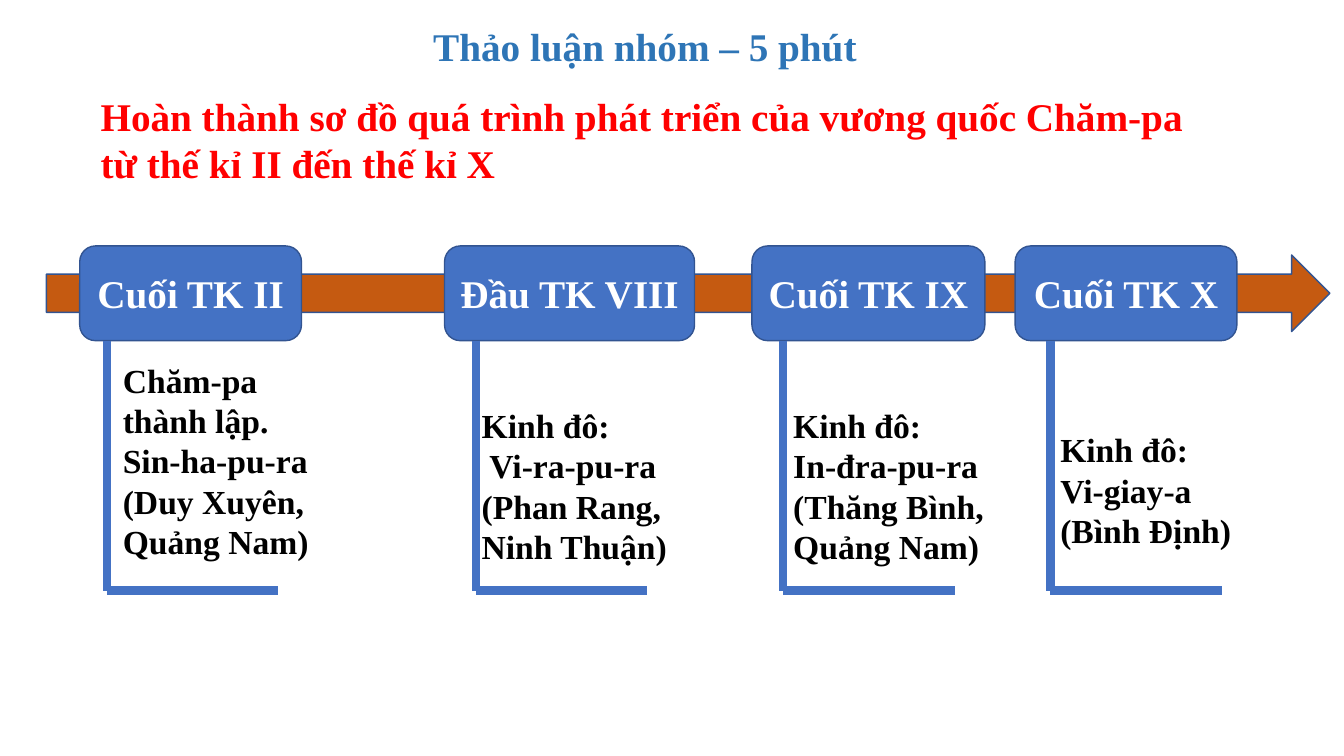
from dataclasses import dataclass

from lxml.etree import SubElement
from pptx import Presentation
from pptx.dml.color import RGBColor
from pptx.enum.shapes import MSO_CONNECTOR, MSO_SHAPE
from pptx.enum.text import MSO_ANCHOR, PP_ALIGN
from pptx.oxml.ns import qn
from pptx.util import Inches, Pt

WIDE, HIGH = Inches(13.33), Inches(7.5)


@dataclass(frozen=True)
class Theme:
    """Hold the colours, font and sizes of the slide."""
    font: str = "Times New Roman"
    head: int = 28
    body: int = 24
    blue: str = "4472C4"
    edge: str = "325491"
    rust: str = "C55A11"
    title: str = "2E75B6"
    red: str = "FF0000"
    black: str = "000000"
    white: str = "FFFFFF"
    thin: int = 1
    thick: int = 6


THEME = Theme()

STAGES = [
    dict(label="Cuối TK II", left=5.93, width=16.5, stem=7.95, note=(8.4, 46.93, 28.27),
         lines=["Chăm-pa thành lập.", "Sin-ha-pu-ra", "(Duy Xuyên, Quảng Nam)"]),
    dict(label="Đầu TK VIII", left=33.08, width=18.6, stem=35.4, note=(35.1, 52.93, 22.93),
         lines=["Kinh đô:", " Vi-ra-pu-ra", "(Phan Rang, Ninh Thuận)"]),
    dict(label="Cuối TK IX", left=55.95, width=17.33, stem=58.28, note=(58.28, 52.93, 22.93),
         lines=["Kinh đô:", "In-đra-pu-ra", "(Thăng Bình, Quảng Nam)"]),
    dict(label="Cuối TK X", left=75.53, width=16.5, stem=78.15, note=(78.15, 56.13, 17.47),
         lines=["Kinh đô:", "Vi-giay-a", "(Bình Định)"]),
]


def col(share):
    """Turn a percentage of the slide width into a length."""
    return round(WIDE * share / 100)


def row(share):
    """Turn a percentage of the slide height into a length."""
    return round(HIGH * share / 100)


def area(left, top, width, height):
    """Turn four percentages into a position and size."""
    return col(left), row(top), col(width), row(height)


def write(frame, *lines, size=THEME.head, color=THEME.black,
          align=PP_ALIGN.LEFT, anchor=MSO_ANCHOR.TOP):
    """Fill a text frame with one bold paragraph per line."""
    frame.word_wrap = True
    frame.vertical_anchor = anchor
    for spot, line in enumerate(lines):
        para = frame.add_paragraph() if spot else frame.paragraphs[0]
        para.alignment = align
        run = para.add_run()
        run.text = line
        run.font.name = THEME.font
        run.font.size = Pt(size)
        run.font.bold = True
        run.font.color.rgb = RGBColor.from_string(color)


def label(slide, place, *lines, **style):
    """Add a text box with formatted lines."""
    write(slide.shapes.add_textbox(*area(*place)).text_frame, *lines, **style)


def block(slide, kind, place, fill):
    """Add a filled and outlined preset shape."""
    shape = slide.shapes.add_shape(kind, *area(*place))
    shape.shadow.inherit = False
    shape.fill.solid()
    shape.fill.fore_color.rgb = RGBColor.from_string(fill)
    shape.line.color.rgb = RGBColor.from_string(THEME.edge)
    shape.line.width = Pt(THEME.thin)
    return shape


def rule(group, start, end):
    """Add a thick straight line to a group."""
    line = group.shapes.add_connector(
        MSO_CONNECTOR.STRAIGHT, col(start[0]), row(start[1]), col(end[0]), row(end[1]))
    line.line.color.rgb = RGBColor.from_string(THEME.blue)
    line.line.width = Pt(THEME.thick)
    SubElement(line.element.spPr, qn("a:effectLst"))


def bracket(slide, left, top=45.07, base=78.13, foot=12.75):
    """Add a stem with a foot running to the right."""
    group = slide.shapes.add_group_shape()
    rule(group, (left, top), (left, base))
    rule(group, (left, base), (left + foot, base))


def stage(slide, label, left, width, stem, note, lines):
    """Add a dated box and the bracket below it."""
    box = block(slide, MSO_SHAPE.ROUNDED_RECTANGLE, (left, 32.53, width, 12.53), THEME.blue)
    write(box.text_frame, label, color=THEME.white,
          align=PP_ALIGN.CENTER, anchor=MSO_ANCHOR.MIDDLE)
    bracket(slide, stem)


def main():
    """Build the timeline slide and save it."""
    deck = Presentation()
    deck.slide_width, deck.slide_height = WIDE, HIGH
    slide = deck.slides.add_slide(deck.slide_layouts[6])
    block(slide, MSO_SHAPE.RIGHT_ARROW, (3.45, 33.73, 95.5, 10.13), THEME.rust)
    label(slide, (31.5, 2.27, 35.85, 7.6), "Thảo luận nhóm – 5 phút", color=THEME.title)
    label(slide, (6.75, 11.6, 84.15, 13.87),
          "Hoàn thành sơ đồ quá trình phát triển của vương quốc Chăm-pa từ thế kỉ II đến thế kỉ X",
          color=THEME.red)
    for item in STAGES:
        stage(slide, **item)
        left, top, height = item["note"]
        label(slide, (left, top, 16.5, height), *item["lines"], size=THEME.body)
    deck.save("out.pptx")


if __name__ == "__main__":
    main()
